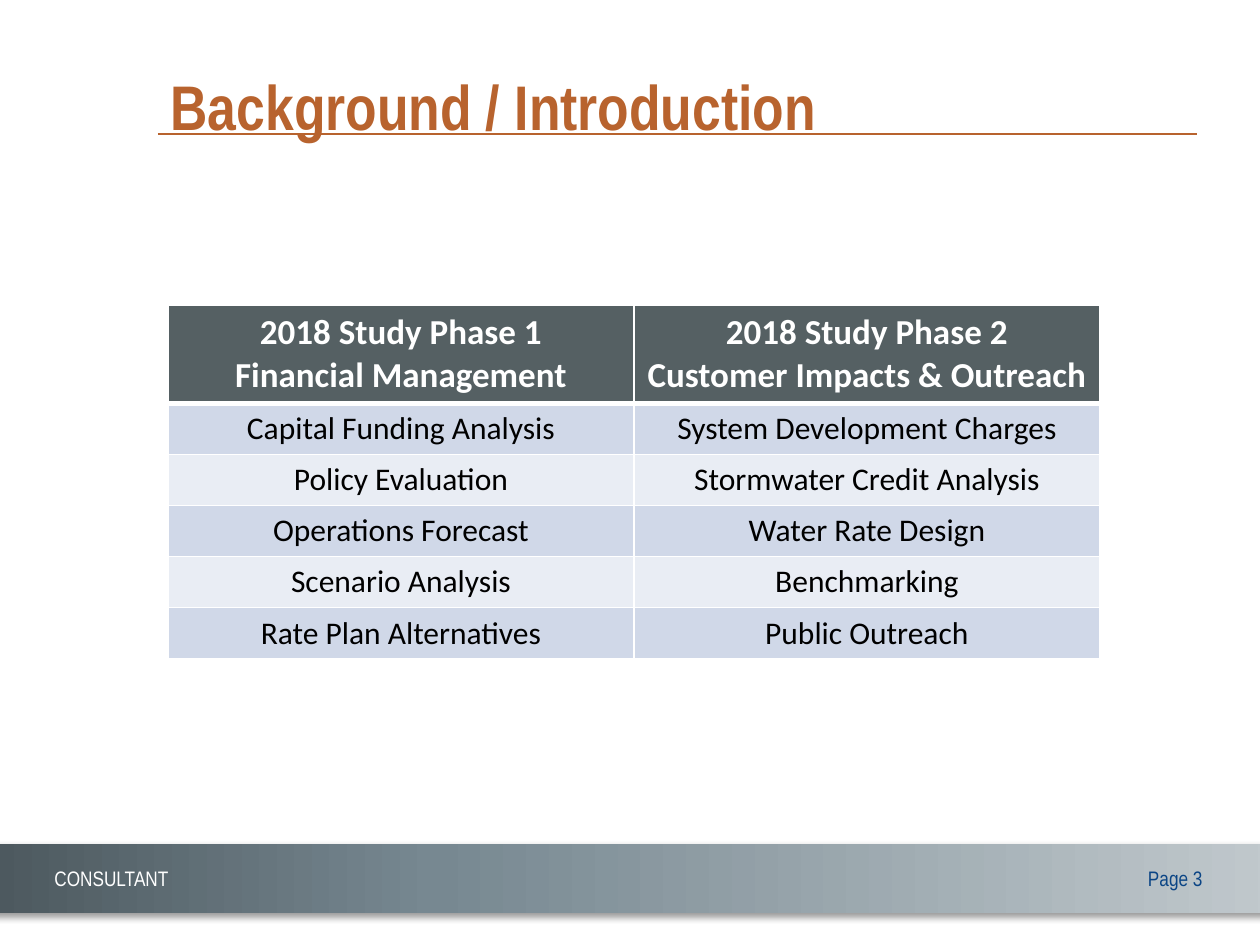
from dataclasses import dataclass

import pptx
import pptx.dml.color
import pptx.enum.shapes
import pptx.enum.text
import pptx.oxml
import pptx.oxml.ns
import pptx.util

PX = 914400 // 126
ALIGN = pptx.enum.text.PP_ALIGN
ANCHOR = pptx.enum.text.MSO_ANCHOR
NARROW = "Arial Narrow"
RUST = "B8632E"
WHITE = "FFFFFF"
HEADER_FILL = "556063"
BAND_FILLS = ("D0D8E8", "E9EDF4")
FOOTER_STOPS = ((0, "4B575D"), (35, "778891"), (100, "C1C9CD"))
HEADER_HEIGHT, ROW_HEIGHT, COLUMN_WIDTH = 97, 51, 466


@dataclass(frozen=True)
class FooterLabel:
    text: str
    left: int
    width: int
    color: str
    align: ALIGN


@dataclass(frozen=True)
class Phase:
    heading: tuple[str, str]
    topics: tuple[str, ...]


FOOTER_LABELS = (
    FooterLabel("Page 3", 1113, 102, "0B4585", ALIGN.RIGHT),
    FooterLabel("CONSULTANT", 42, 179, WHITE, ALIGN.LEFT),
)
PHASES = (
    Phase(
        ("2018 Study Phase 1", "Financial Management"),
        ("Capital Funding Analysis", "Policy Evaluation", "Operations Forecast",
         "Scenario Analysis", "Rate Plan Alternatives"),
    ),
    Phase(
        ("2018 Study Phase 2", "Customer Impacts & Outreach"),
        ("System Development Charges", "Stormwater Credit Analysis",
         "Water Rate Design", "Benchmarking", "Public Outreach"),
    ),
)


def px(*lengths: int) -> list[int]:
    return [length * PX for length in lengths]


def rgb(color: str) -> pptx.dml.color.RGBColor:
    return pptx.dml.color.RGBColor.from_string(color)


def element(xml: str):
    """Parse one DrawingML element, given without its namespace declaration."""
    tag, rest = xml.split(" ", 1)
    return pptx.oxml.parse_xml(f"{tag} {pptx.oxml.ns.nsdecls('a')} {rest}")


def style(paragraph, font: str, size: int, color: str, align: ALIGN, bold: bool = False) -> None:
    paragraph.alignment = align
    paragraph.font.name = font
    paragraph.font.size = pptx.util.Pt(size)
    paragraph.font.bold = bold
    paragraph.font.color.rgb = rgb(color)


def draw_footer_band(slide) -> None:
    band = slide.shapes.add_shape(
        pptx.enum.shapes.MSO_SHAPE.RECTANGLE, *px(-21, 844, 1302, 69))
    band.line.fill.background()
    band.fill.gradient()
    band.fill.gradient_angle = 0
    stops = band.element.spPr.find(".//" + pptx.oxml.ns.qn("a:gsLst"))
    stops[:] = [
        element(f'<a:gs pos="{position * 1000}"><a:srgbClr val="{color}"/></a:gs>')
        for position, color in FOOTER_STOPS
    ]
    band.shadow.inherit = False
    effects = band.element.spPr.find(pptx.oxml.ns.qn("a:effectLst"))
    effects.append(element(
        '<a:outerShdw blurRad="50800" dist="38100" dir="2700000" rotWithShape="0">'
        '<a:srgbClr val="000000"><a:alpha val="40000"/></a:srgbClr></a:outerShdw>'))


def draw_footer_label(slide, label: FooterLabel) -> None:
    box = slide.shapes.add_textbox(*px(label.left, 859, label.width, 38))
    box.text_frame.word_wrap = True
    box.text_frame.text = label.text
    style(box.text_frame.paragraphs[0], NARROW, 12, label.color, label.align)


def draw_title_rule(slide) -> None:
    rule = slide.shapes.add_connector(
        pptx.enum.shapes.MSO_CONNECTOR.STRAIGHT, *px(158, 134, 1197, 134))
    rule.line.color.rgb = rgb(RUST)
    rule.line.width = pptx.util.Pt(1.5)
    rule.element.spPr.append(element("<a:effectLst />"))


def place_title(slide, text: str) -> None:
    title = slide.shapes.title
    title.left, title.top, title.width, title.height = px(158, 42, 1040, 126)
    title.text_frame.text = text
    title.text_frame.vertical_anchor = ANCHOR.MIDDLE
    style(title.text_frame.paragraphs[0], NARROW, 36, RUST, ALIGN.LEFT, bold=True)
    title.element.getparent().append(title.element)  # in front of the rule


def fill_cell(cell, lines: tuple[str, ...], size: int, color: str, fill: str,
              bold: bool, edges: dict[str, int]) -> None:
    """Write a cell; edges maps each border tag to its width in points."""
    cell.text_frame.text = "\n".join(lines)
    for paragraph in cell.text_frame.paragraphs:
        style(paragraph, "Calibri", size, color, ALIGN.CENTER, bold)
    cell.fill.solid()
    cell.fill.fore_color.rgb = rgb(fill)
    properties = cell._tc.get_or_add_tcPr()
    for position, (tag, width) in enumerate(edges.items()):
        properties.insert(position, element(
            f'<a:{tag} w="{pptx.util.Pt(width)}"><a:solidFill>'
            f'<a:srgbClr val="{WHITE}"/></a:solidFill></a:{tag}>'))


def draw_phase_table(slide, phases: tuple[Phase, ...]) -> None:
    topic_count = len(phases[0].topics)
    table = slide.shapes.add_table(
        topic_count + 1, len(phases),
        *px(168, 305, COLUMN_WIDTH * len(phases), HEADER_HEIGHT + ROW_HEIGHT * topic_count),
    ).table
    for row, height in zip(table.rows, px(HEADER_HEIGHT, *[ROW_HEIGHT] * topic_count)):
        row.height = height
    thin = {"lnL": 1, "lnR": 1, "lnT": 1, "lnB": 1}
    for column, phase in enumerate(phases):
        table.columns[column].width = COLUMN_WIDTH * PX
        fill_cell(table.cell(0, column), phase.heading, 20, WHITE, HEADER_FILL,
                  True, thin | {"lnB": 3})
        for index, topic in enumerate(phase.topics):
            edges = thin | {"lnT": 3} if index == 0 else thin
            fill_cell(table.cell(index + 1, column), (topic,), 18, "000000",
                      BAND_FILLS[index % 2], False, edges)


def main() -> None:
    presentation = pptx.Presentation()
    presentation.slide_width, presentation.slide_height = px(1260, 945)
    slide = presentation.slides.add_slide(presentation.slide_layouts[5])
    draw_footer_band(slide)
    draw_title_rule(slide)
    for label in FOOTER_LABELS:
        draw_footer_label(slide, label)
    place_title(slide, "Background / Introduction")
    draw_phase_table(slide, PHASES)
    presentation.save("out.pptx")


if __name__ == "__main__":
    main()
